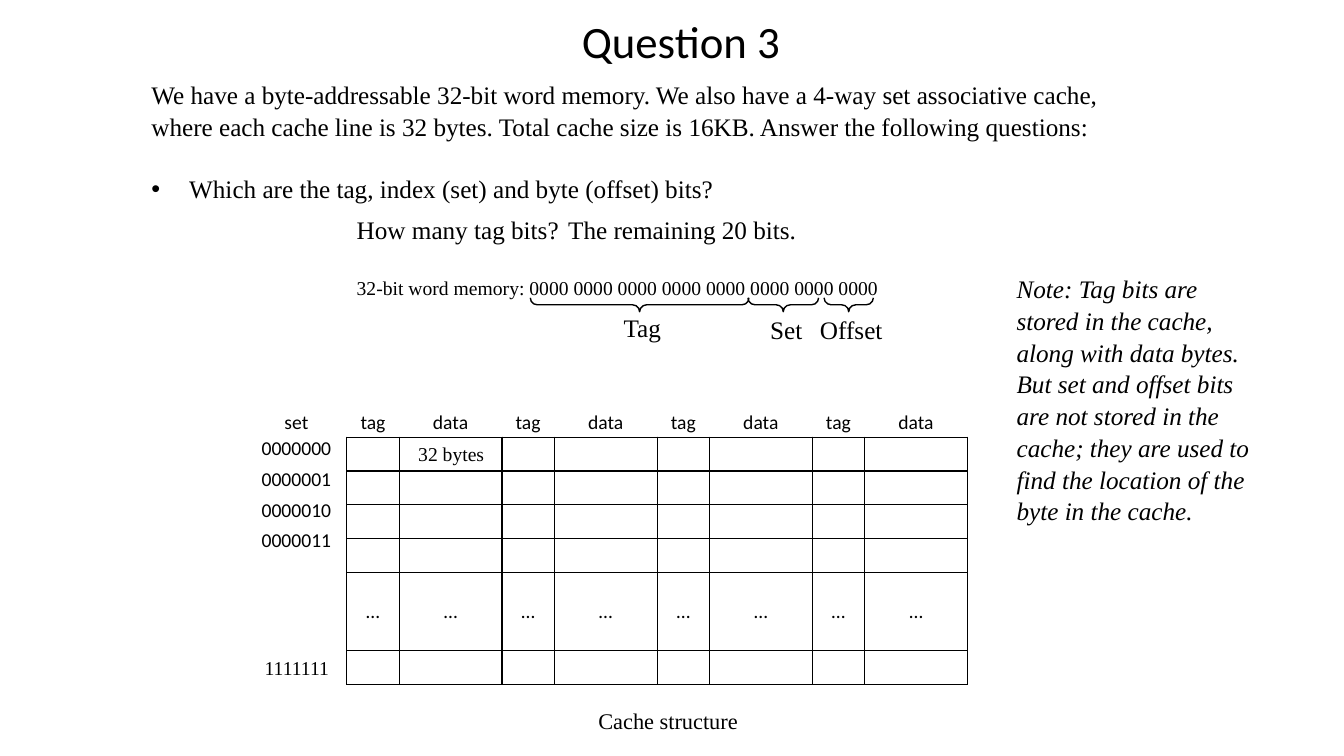
from dataclasses import dataclass

from lxml import etree
from pptx import Presentation
from pptx import util as u
from pptx.dml.color import RGBColor
from pptx.enum import shapes, text
from pptx.oxml import ns

BLACK = RGBColor(0, 0, 0)
SERIF, SANS = "Times New Roman", "Calibri"
LEFT, CENTER = text.PP_ALIGN.LEFT, text.PP_ALIGN.CENTER
TOP, MIDDLE = text.MSO_ANCHOR.TOP, text.MSO_ANCHOR.MIDDLE

GRID_X, GRID_Y = 8.74, 10.31
COLS = [1.32, 2.59]
HEAD, ROW, DOTS, LAST = 0.71, 0.85, 1.98, 0.84
WAYS, SETS = 4, 4


@dataclass
class Label:
    words: str
    x: float
    y: float
    w: float
    h: float = 1.02
    size: int = 18
    align: text.PP_ALIGN = LEFT
    wrap: bool = False
    italic: bool = False
    pitch: float = 1.0


@dataclass
class Field:
    """A group of address bits: brace centre, brace span and label box."""
    name: str
    mid: float
    span: float
    y: float
    w: float


LABELS = [
    Label("How many tag bits?", 8.74, 5.28, 5.82),
    Label("The remaining 20 bits.", 14.07, 5.28, 6.32),
    Label("Cache structure", 14.83, 17.7, 4.17, 0.94, 16),
    Label("32 bytes", 10.29, 11.02, 2.18, 0.86, 14),
    Label("1111111", 6.4, 16.41, 2.16, 0.86, 14, CENTER),
    Label("32-bit word memory: 0000 0000 0000 0000 0000 0000 0000 0000",
          8.74, 6.83, 14.25, 0.86, 14),
    Label("Note: Tag bits are stored in the cache, along with data bytes. "
          "But set and offset bits\nare not stored in the cache; they are "
          "used to find the location of the byte in the cache.",
          25.37, 6.73, 6.43, 6.4, wrap=True, italic=True, pitch=1.05),
]

FIELDS = [
    Field("Tag", 16.12, 5.51, 7.75, 1.47),
    Field("Set", 19.74, 1.78, 7.8, 1.32),
    Field("Offset", 21.39, 1.24, 7.8, 2.11),
]


def write(frame, words: str, size: int = 18, font: str = SERIF,
          align: text.PP_ALIGN = LEFT, italic: bool = False,
          pitch: float = 1.0) -> None:
    for i, line in enumerate(words.split("\n")):
        para = frame.add_paragraph() if i else frame.paragraphs[0]
        para.alignment, para.line_spacing = align, pitch
        run = para.add_run()
        run.text = line
        run.font.size, run.font.name = u.Pt(size), font
        run.font.italic = italic
        run.font.color.rgb = BLACK


def place(shape, x: float, y: float, w: float, h: float) -> None:
    shape.left, shape.top = u.Cm(x), u.Cm(y)
    shape.width, shape.height = u.Cm(w), u.Cm(h)


def add_label(slide, item: Label) -> None:
    box = slide.shapes.add_textbox(
        u.Cm(item.x), u.Cm(item.y), u.Cm(item.w), u.Cm(item.h))
    box.text_frame.word_wrap = item.wrap
    write(box.text_frame, item.words, item.size, align=item.align,
          italic=item.italic, pitch=item.pitch)


def set_edges(cell, sides: str) -> None:
    """Rule the named sides (of LRTB) in black and clear the others."""
    props = cell._tc.get_or_add_tcPr()
    for side in "LRTB":
        edge = etree.SubElement(props, ns.qn(f"a:ln{side}"), w="12700")
        if side in sides:
            fill = etree.SubElement(edge, ns.qn("a:solidFill"))
            etree.SubElement(fill, ns.qn("a:srgbClr"), val=str(BLACK))
        else:
            etree.SubElement(edge, ns.qn("a:noFill"))


def add_grid(slide, x: float, y: float, cols: list[float],
             rows: list[float], words: list[list[str]], edges: list[str],
             anchors: list[text.MSO_ANCHOR]) -> None:
    """Draw a table; edges and anchors hold one entry a row."""
    table = slide.shapes.add_table(
        len(rows), len(cols), u.Cm(x), u.Cm(y),
        u.Cm(sum(cols)), u.Cm(sum(rows))).table
    table.first_row = table.horz_banding = False
    for c, width in enumerate(cols):
        table.columns[c].width = u.Cm(width)
    for r, height in enumerate(rows):
        table.rows[r].height = u.Cm(height)
        for c in range(len(cols)):
            cell = table.cell(r, c)
            cell.margin_left = cell.margin_right = 0
            cell.margin_top = cell.margin_bottom = 0
            cell.vertical_anchor = anchors[r]
            set_edges(cell, edges[r])
            cell.fill.background()
            if words[r][c]:
                write(cell.text_frame, words[r][c], 14, SANS, CENTER)


def add_way(slide, x: float) -> None:
    """Draw one way of the cache: first sets, gap and last set."""
    blank = ["", ""]
    parts = [
        ([HEAD] + [ROW] * SETS, [["tag", "data"]] + [blank] * SETS,
         ["B"] + ["LRTB"] * SETS),
        ([DOTS], [["…", "…"]], ["LRTB"]),
        ([LAST], [blank], ["LRTB"]),
    ]
    y = GRID_Y
    for rows, words, edges in parts:
        add_grid(slide, x, y, COLS, rows, words, edges, [MIDDLE] * len(rows))
        y += sum(rows)


def add_field(slide, item: Field) -> None:
    thick, mid_y = 0.35, 7.68
    brace = slide.shapes.add_shape(
        shapes.MSO_SHAPE.LEFT_BRACE, u.Cm(item.mid - thick / 2),
        u.Cm(mid_y - item.span / 2), u.Cm(thick), u.Cm(item.span))
    brace.rotation = 270
    brace.adjustments[0], brace.adjustments[1] = 0.51, 0.5
    brace.shadow.inherit = False
    brace.fill.background()
    brace.line.color.rgb, brace.line.width = BLACK, u.Pt(1)
    add_label(slide, Label(item.name, item.mid + 0.08 - item.w / 2,
                           item.y, item.w))


def add_intro(slide) -> None:
    title, body = slide.placeholders
    place(title, 2.77, -0.56, 28.78, 3.18)
    title.text_frame.vertical_anchor = MIDDLE
    write(title.text_frame, "Question 3", 32, SANS, CENTER)

    place(body, 3.56, 1.83, 25.91, 3.33)
    body.text_frame.auto_size = text.MSO_AUTO_SIZE.NONE
    write(body.text_frame,
          "We have a byte-addressable 32-bit word memory. We also have a "
          "4-way set associative cache, where each cache line is 32 bytes. "
          "Total cache size is 16KB. Answer the following questions:\n"
          "Which are the tag, index (set) and byte (offset) bits?",
          pitch=1.05)
    lead, point = body.text_frame.paragraphs
    lead.space_before, point.space_before = u.Pt(0), u.Pt(22)
    props = lead._p.get_or_add_pPr()
    props.set("marL", "0")
    props.set("indent", "0")
    etree.SubElement(props, ns.qn("a:buNone"))


def main() -> None:
    deck = Presentation()
    deck.slide_width, deck.slide_height = u.Cm(33.87), u.Cm(19.05)
    slide = deck.slides.add_slide(deck.slide_layouts[1])
    add_intro(slide)
    codes = [["set"]] + [[f"{n:07b}"] for n in range(SETS)]
    add_grid(slide, 6.2, GRID_Y, [2.54], [HEAD] + [0.77] * SETS, codes,
             [""] * len(codes), [MIDDLE] + [TOP] * SETS)
    for way in range(WAYS):
        add_way(slide, GRID_X + way * sum(COLS))
    for item in LABELS:
        add_label(slide, item)
    for item in FIELDS:
        add_field(slide, item)
    deck.save("out.pptx")


if __name__ == "__main__":
    main()
